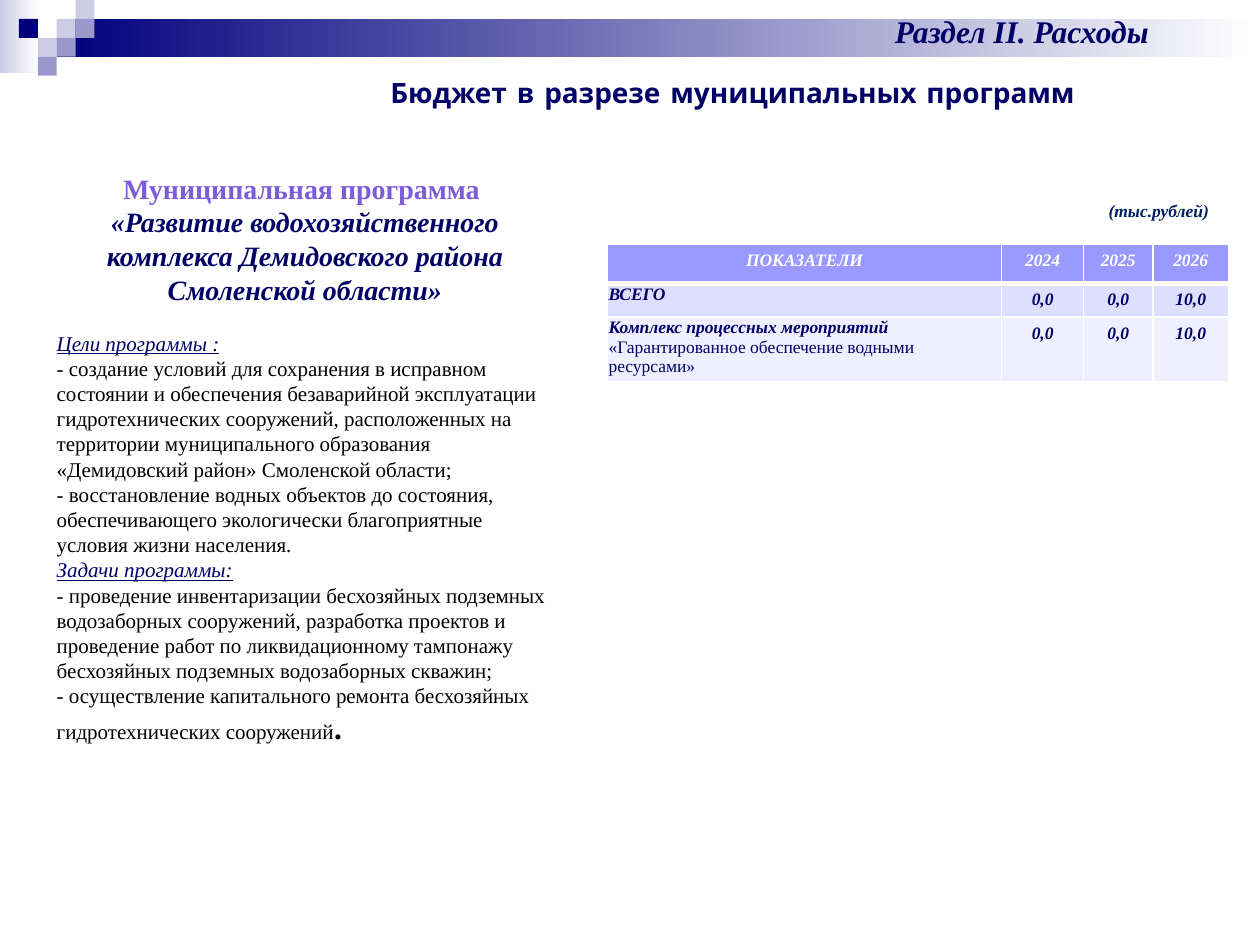
from lxml.etree import SubElement
from pptx import Presentation
from pptx.dml.color import RGBColor
from pptx.enum.shapes import MSO_SHAPE
from pptx.enum.text import MSO_ANCHOR, MSO_AUTO_SIZE, PP_ALIGN
from pptx.oxml.ns import qn
from pptx.util import Inches, Pt

# Content
SECTION = "Раздел II. Расходы"
TITLE = "Бюджет в разрезе муниципальных программ"
UNITS = "(тыс.рублей)"
SERIF, NAVY = "Times New Roman", "000066"
BASE = dict(name=SERIF, size=12, color="000000")
LABEL = dict(BASE, color=NAVY, italic=True, underline=True)
PROGRAM = dict(BASE, size=16, color="7D5CDA", bold=True)
CELL = dict(name=SERIF, size=10, color=NAVY, bold=True, italic=True)
C, L = PP_ALIGN.CENTER, PP_ALIGN.LEFT

# Paragraphs: alignment, space before, runs
BODY = [
    (C, 0, [("Муниципальная программа ", PROGRAM)]),
    (C, 0, [("«Развитие водохозяйственного комплекса Демидовского района Смоленской области»",
             dict(PROGRAM, color=NAVY, italic=True))]),
    (L, 14, [("Цели программы :", LABEL)]),
    (L, 0, [("- создание условий для сохранения в исправном состоянии и обеспечения "
             "безаварийной эксплуатации гидротехнических сооружений, расположенных на территории "
             "муниципального образования «Демидовский район» Смоленской области;", BASE)]),
    (L, 0, [("- восстановление водных объектов до состояния, обеспечивающего экологически "
             "благоприятные условия жизни населения.", BASE)]),
    (L, 0, [("Задачи программы:", LABEL)]),
    (L, 0, [("- проведение инвентаризации бесхозяйных подземных водозаборных сооружений, "
             "разработка проектов и проведение работ по ликвидационному тампонажу бесхозяйных "
             "подземных водозаборных скважин;", BASE)]),
    (L, 0, [("- осуществление капитального ремонта бесхозяйных гидротехнических сооружений", BASE),
            (".", dict(BASE, size=18, bold=True))]),
]
ROWS = [
    ([("ПОКАЗАТЕЛИ", {})], "2024", "2025", "2026"),
    ([("ВСЕГО", {})], "0,0", "0,0", "10,0"),
    ([("Комплекс процессных мероприятий ", {}),
      ("«Гарантированное обеспечение водными ресурсами»", dict(bold=False, italic=False))],
     "0,0", "0,0", "10,0"),
]
ROW_FILLS = ["9999FF", "DEDEFF", "EFEFFF"]
COL_W, ROW_H = [3.13, 0.65, 0.55, 0.6], [0.31, 0.26, 0.51]

# Header decoration on a square grid: column, row, colour
UNIT = 0.15
SQUARES = [(3, 1, "CCCCE6"), (4, 0, "CCCCE6"), (4, 1, "9999CC"), (2, 2, "CCCCE6"),
           (1, 1, "00007D"), (3, 2, "9999CC"), (2, 3, "9999CC")]
BANDS = [(0, 0, 0.31, 0.58, "CCCCE6"), (0.45, 0.15, 9.55, 0.3, "00007D")]


def rgb(value):
    return RGBColor.from_string(value)


def add_runs(p, runs):
    for text, fmt in runs:
        r = p.add_run()
        r.text = text
        for key, value in fmt.items():
            if key == "color":
                r.font.color.rgb = rgb(value)
            else:
                setattr(r.font, key, Pt(value) if key == "size" else value)


def write(tf, paragraphs):
    for i, (align, before, runs) in enumerate(paragraphs):
        p = tf.paragraphs[0] if i == 0 else tf.add_paragraph()
        p.alignment, p.space_before = align, Pt(before)
        add_runs(p, runs)


def place(sp, x, y, w, h):
    sp.left, sp.top, sp.width, sp.height = map(Inches, (x, y, w, h))


def add_rect(s, x, y, w, h, color, fade=False):
    sp = s.shapes.add_shape(MSO_SHAPE.RECTANGLE, *map(Inches, (x, y, w, h)))
    sp.shadow.inherit = False
    sp.line.fill.background()
    if fade:
        sp.fill.gradient()
        sp.fill.gradient_angle = 0
        for stop, pos, value in zip(sp.fill.gradient_stops, (0, 1), (color, "FFFFFF")):
            stop.position, stop.color.rgb = pos, rgb(value)
    else:
        sp.fill.solid()
        sp.fill.fore_color.rgb = rgb(color)


def add_label(s, box, text, fmt, align, wrap=True):
    sp = s.shapes.add_textbox(*map(Inches, box))
    sp.text_frame.word_wrap = wrap
    write(sp.text_frame, [(align, 0, [(text, fmt)])])


def set_borders(cell, widths):
    tcPr = cell._tc.get_or_add_tcPr()
    for side, width in zip("LRTB", widths):
        ln = SubElement(tcPr, qn(f"a:ln{side}"), w=str(Pt(width)))
        SubElement(SubElement(ln, qn("a:solidFill")), qn("a:srgbClr"), val="FFFFFF")


def add_table(s, x, y):
    size = map(Inches, (x, y, sum(COL_W), sum(ROW_H)))
    table = s.shapes.add_table(len(ROWS), len(COL_W), *size).table
    for col, w in zip(table.columns, COL_W):
        col.width = Inches(w)
    for i, (row, values) in enumerate(zip(table.rows, ROWS)):
        row.height = Inches(ROW_H[i])
        fmt = dict(CELL, color=NAVY if i else "FFFFFF")
        for j, value in enumerate(values):
            cell = table.cell(i, j)
            set_borders(cell, (1, 1, 3 if i == 1 else 1, 3 if i == 0 else 1))
            cell.fill.solid()
            cell.fill.fore_color.rgb = rgb(ROW_FILLS[i])
            is_name = i > 0 and j == 0
            if is_name:
                cell.margin_left = cell.margin_right = cell.margin_top = Inches(0.01)
                cell.margin_bottom = 0
            runs = value if j == 0 else [(value, {})]
            write(cell.text_frame, [(L if is_name else C, 0, [(t, {**fmt, **f}) for t, f in runs])])


def main():
    prs = Presentation()
    prs.slide_width, prs.slide_height = Inches(10), Inches(7.5)
    s = prs.slides.add_slide(prs.slide_layouts[1])
    title, body = s.placeholders[0], s.placeholders[1]

    # Header decoration
    for band in BANDS:
        add_rect(s, *band, fade=True)
    for col, row, color in SQUARES:
        add_rect(s, col * UNIT, row * UNIT, UNIT, UNIT, color)

    # Title and programme description
    place(title, 1.77, 0.55, 8.09, 0.37)
    write(title.text_frame, [(C, 0, [(TITLE, dict(name="Comic Neue", size=16, color=NAVY, bold=True))])])
    place(body, 0.35, 1.31, 4.14, 4.71)
    write(body.text_frame, BODY)
    for sp in (title, body):
        sp.text_frame.auto_size = MSO_AUTO_SIZE.NONE
        sp.text_frame.vertical_anchor = MSO_ANCHOR.TOP
    for p in body.text_frame.paragraphs:
        pPr = p._p.get_or_add_pPr()
        pPr.set("marL", "0")
        pPr.set("indent", "0")
        SubElement(pPr, qn("a:buNone"))

    # Section name, table and its units
    add_label(s, (6.26, 0.05, 3.7, 0.4), SECTION, dict(CELL, size=18), C)
    add_table(s, 4.82, 1.94)
    add_label(s, (8.7, 1.54, 1.02, 0.27), UNITS, dict(CELL, color="002060"), L, wrap=False)
    prs.save("out.pptx")


if __name__ == "__main__":
    main()
